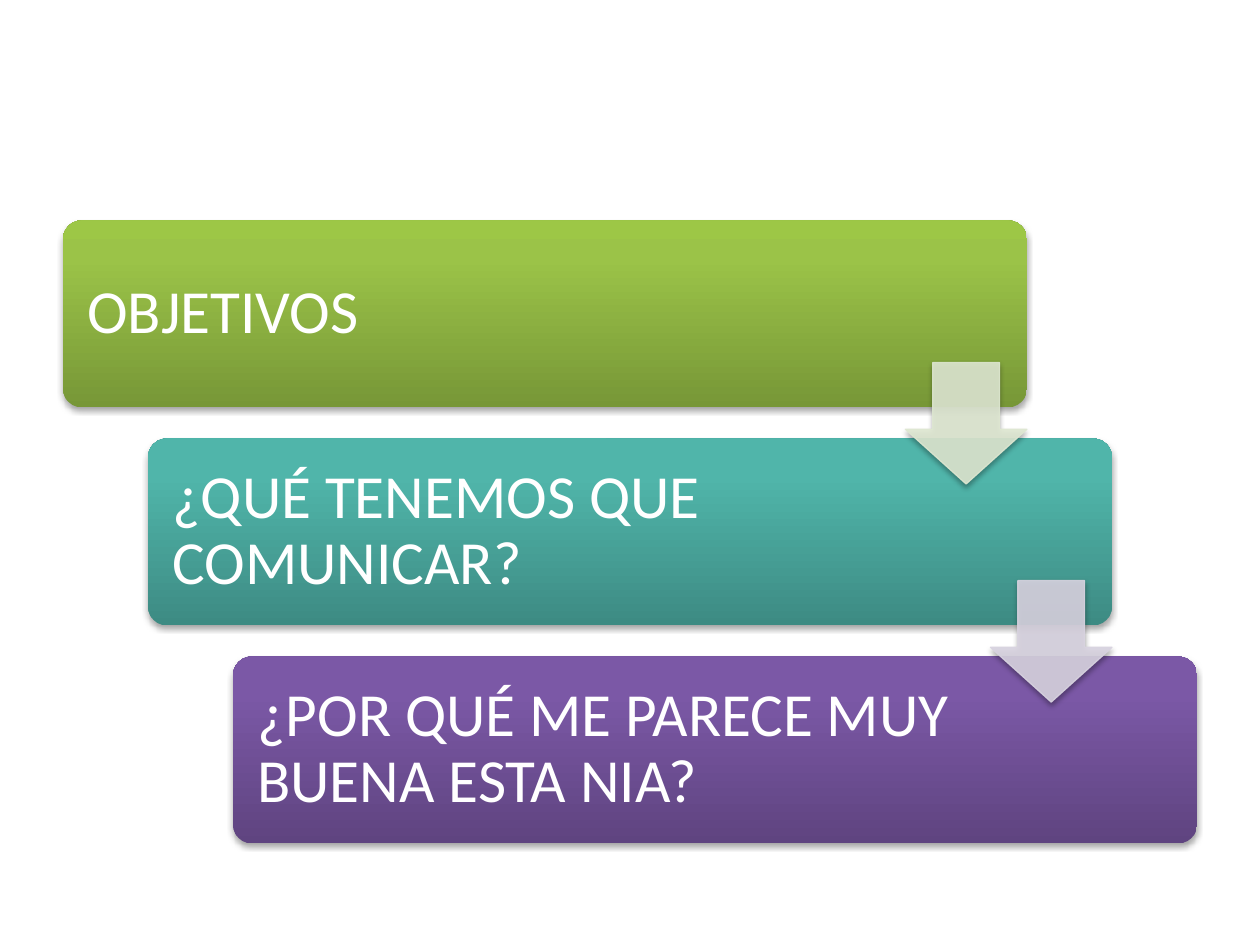
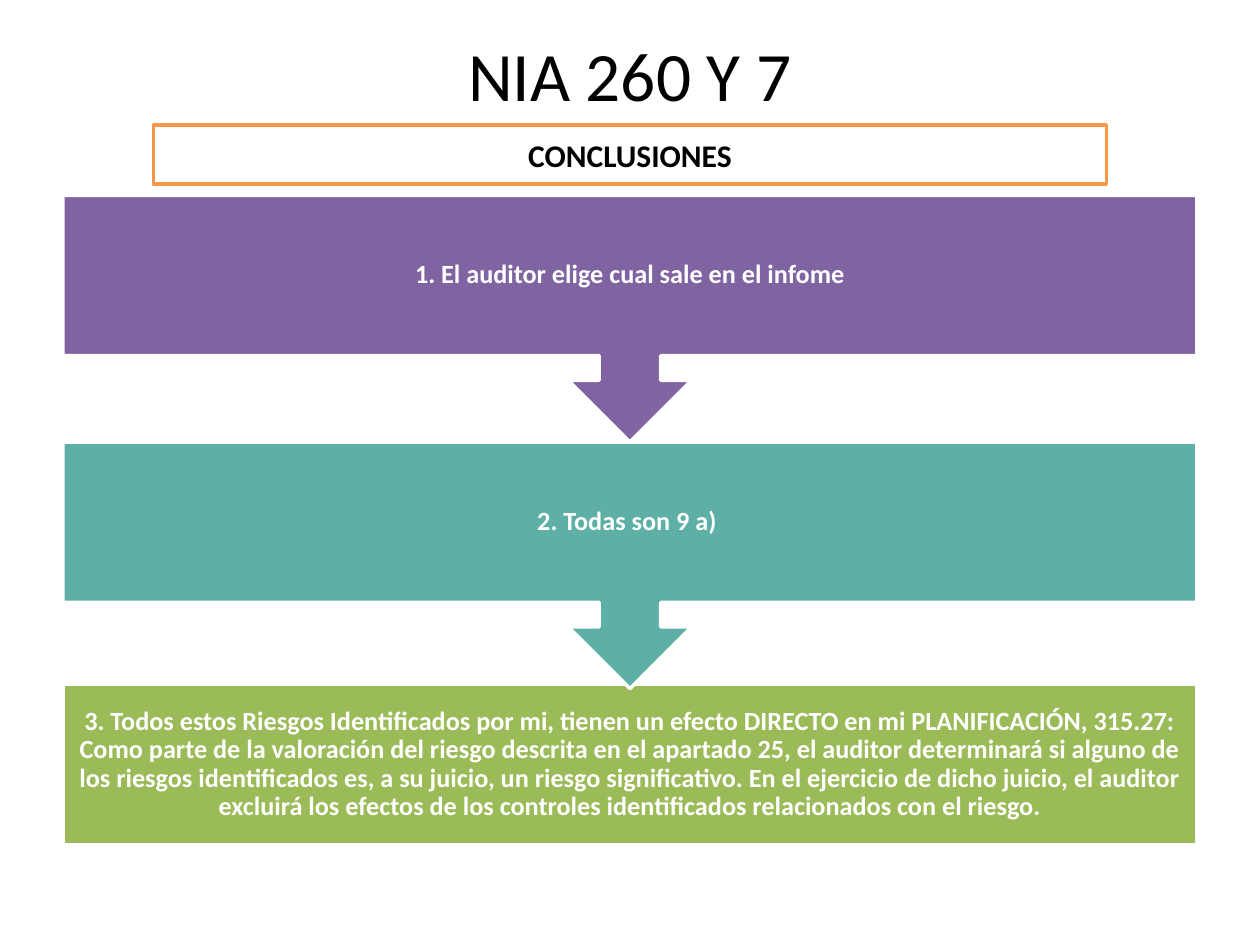
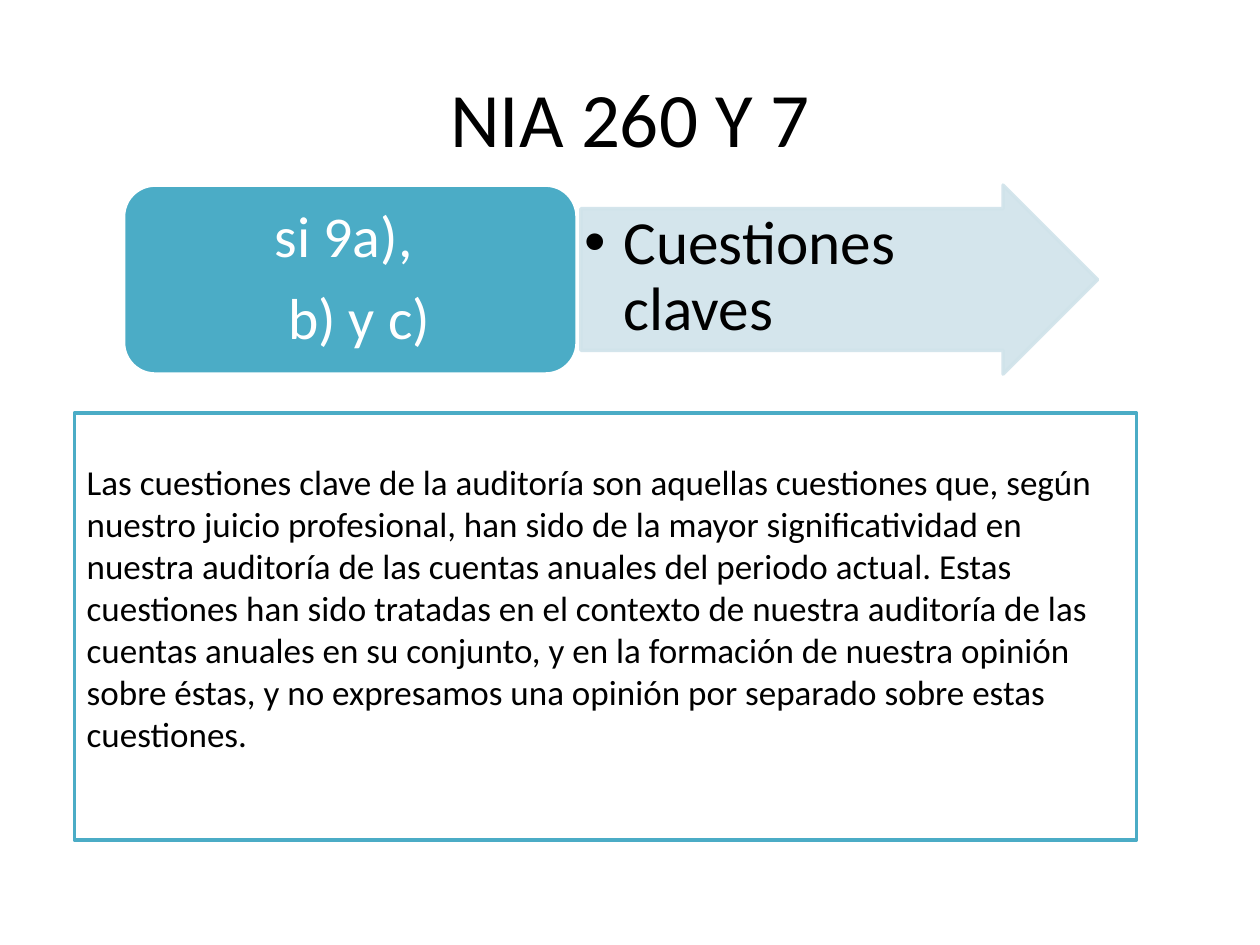
from lxml import etree
from pptx import Presentation
from pptx.dml.color import RGBColor
from pptx.enum.shapes import MSO_SHAPE
from pptx.enum.text import MSO_ANCHOR, MSO_AUTO_SIZE, PP_ALIGN
from pptx.oxml.ns import qn
from pptx.util import Pt

RECT, ROUND = MSO_SHAPE.RECTANGLE, MSO_SHAPE.ROUNDED_RECTANGLE
DOWN, RIGHT = MSO_SHAPE.DOWN_ARROW, MSO_SHAPE.RIGHT_ARROW
CALLOUT = MSO_SHAPE.DOWN_ARROW_CALLOUT
LEFT, CENTER = PP_ALIGN.LEFT, PP_ALIGN.CENTER
TOP, MIDDLE = MSO_ANCHOR.TOP, MSO_ANCHOR.MIDDLE

FONT = "Calibri"
TITLE_ONLY, BLANK = 5, 6
TITLE_BOX = (36, 21.6, 648, 90)
TITLE = "NIA 260 Y 7"
COLORS = {
    "white": "FFFFFF", "black": "000000", "orange": "F79646",
    "purple": "8064A2", "teal": "5EAFA6", "green": "9BBB59",
    "blue": "4BACC6", "pale_blue": "D0E3EA",
    "pale_green": "DEE7D1", "pale_purple": "D8D3E0",
}
# Gradient stops at 0, 80 and 100 percent, from bottom to top
GRADIENTS = {
    "green": ("779737", "9BC348", "9DC746"),
    "teal": ("3D8B83", "50B5AA", "4EB8AC"),
    "purple": ("5F4480", "7B58A6", "7C57A8"),
}


def rgb(name):
    return RGBColor.from_string(COLORS[name])


def add_xml(parent, tag, **attrs):
    return etree.SubElement(parent, qn(tag), {k: str(v) for k, v in attrs.items()})


def set_alpha(fill_parent, percent):
    for clr in fill_parent.iter(qn("a:srgbClr")):
        add_xml(clr, "a:alpha", val=percent * 1000)


def add_shadow(sp):
    shadow = add_xml(sp._element.spPr.find(qn("a:effectLst")), "a:outerShdw",
                     blurRad=Pt(3.1), dist=Pt(1.8), dir=5400000, rotWithShape=0)
    clr = add_xml(shadow, "a:srgbClr", val=COLORS["black"])
    add_xml(clr, "a:alpha", val=35000)


def set_gradient(sp, stops):
    sp.fill.gradient()
    grad = sp._element.spPr.find(qn("a:gradFill"))
    for child in list(grad):
        grad.remove(child)
    gs_list = add_xml(grad, "a:gsLst")
    for pos, color in zip((0, 80, 100), stops):
        add_xml(add_xml(gs_list, "a:gs", pos=pos * 1000), "a:srgbClr", val=color)
    add_xml(grad, "a:lin", ang=16200000, scaled=0)


def add_box(s, kind, box, fill=None, line=None, width=2, adj=(), alpha=None):
    sp = s.shapes.add_shape(kind, *map(Pt, box))
    sp.shadow.inherit = False
    for i, value in enumerate(adj):
        sp.adjustments[i] = value
    if fill:
        sp.fill.solid()
        sp.fill.fore_color.rgb = rgb(fill)
    if line:
        sp.line.color.rgb = rgb(line)
        sp.line.width = Pt(width)
    else:
        sp.line.fill.background()
    if alpha:
        set_alpha(sp._element.spPr, alpha)
    return sp


def write(sp, *texts, size, color="white", bold=False, align=CENTER,
          anchor=MIDDLE, insets=(7.2, 3.6, 7.2, 3.6), spacing=None, after=0):
    tf = sp.text_frame
    tf.word_wrap = True
    tf.auto_size = MSO_AUTO_SIZE.NONE
    tf.vertical_anchor = anchor
    tf.margin_left, tf.margin_top, tf.margin_right, tf.margin_bottom = map(Pt, insets)
    for i, text in enumerate(texts):
        p = tf.add_paragraph() if i else tf.paragraphs[0]
        p.alignment = align
        if spacing:
            p.line_spacing = spacing
        if after:
            p.space_after = Pt(after)
        r = p.add_run()
        r.text = text
        r.font.name, r.font.size, r.font.bold = FONT, Pt(size), bold
        r.font.color.rgb = rgb(color)
    return tf


def add_title(s, size, bottom=3.6):
    title = s.shapes.title
    title.left, title.top, title.width, title.height = map(Pt, TITLE_BOX)
    write(title, TITLE, size=size, color="black", insets=(7.2, 3.6, 7.2, bottom))


def add_staircase(s, box, steps, arrow_colors):
    """Cards stepping down to the right, with an arrow from each to the next."""
    x, y, w, h = box
    card_w, card_h = 0.85 * w, 0.3 * h
    dx, dy = ((w - card_w) / (len(steps) - 1), (h - card_h) / (len(steps) - 1))
    for i, (text, gradient) in enumerate(steps):
        card = add_box(s, ROUND, (x + i * dx, y + i * dy, card_w, card_h), adj=(0.1,))
        set_gradient(card, GRADIENTS[gradient])
        add_shadow(card)
        write(card, text, size=35, align=LEFT, spacing=0.9,
              insets=(10.8, 10.8, 125, 10.8))
    side = 0.65 * card_h
    for i, color in enumerate(arrow_colors):
        arrow = add_box(s, DOWN,
                        (x + i * dx + card_w - side, y + i * dy + 0.76 * card_h, side, side),
                        fill=color, line=color, width=0.75, adj=(0.55, 0.45), alpha=90)
        add_shadow(arrow)


def add_conclusions(s, box, steps):
    """Stacked callouts pointing down to a closing block, drawn from the bottom up."""
    x, y, w, h = box
    pitch, block_h = 0.38 * h, 0.247 * h
    last = len(steps) - 1
    for i, (text, color) in reversed(list(enumerate(steps))):
        if i == last:
            kind, place = RECT, (x, y + h - block_h, w, block_h)
        else:
            kind, place = CALLOUT, (x, y + i * pitch, w, pitch)
        sp = add_box(s, kind, place, fill=color, line="white")
        write(sp, text, size=15, bold=True, spacing=0.9, insets=(8.5,) * 4)


def add_key_matter(s, box, cases, result):
    """Rounded card with the cases, and an arrow holding the result."""
    x, y, w, h = box
    card_w, gap = 259.2, 2.2
    arrow = add_box(s, RIGHT, (x + card_w + gap, y, w - card_w - gap, h),
                    fill="pale_blue", line="pale_blue", adj=(0.75, 0.5), alpha=90)
    tf = write(arrow, result, size=35, color="black", align=LEFT, anchor=TOP,
               spacing=0.9, insets=(1.75,) * 4)
    pPr = tf.paragraphs[0]._p.get_or_add_pPr()
    pPr.set("marL", str(Pt(22.5)))
    pPr.set("indent", str(-Pt(22.5)))
    add_xml(pPr, "a:buFont", typeface="Arial")
    add_xml(pPr, "a:buChar", char="•")

    card = add_box(s, ROUND, (x, y, card_w, h), fill="blue", line="white")
    tf = write(card, *cases, size=33, spacing=0.9, after=11, insets=(10, 5, 10, 5))
    tf.paragraphs[-1]._p.get_or_add_pPr().set("marL", str(Pt(10)))


def staircase_slide(prs):
    s = prs.slides.add_slide(prs.slide_layouts[BLANK])
    add_staircase(s, (36, 126, 648, 356), [
        ("OBJETIVOS", "green"),
        ("¿QUÉ TENEMOS QUE COMUNICAR?", "teal"),
        ("¿POR QUÉ ME PARECE MUY BUENA ESTA NIA?", "purple"),
    ], ("pale_green", "pale_purple"))


def conclusions_slide(prs):
    s = prs.slides.add_slide(prs.slide_layouts[TITLE_ONLY])
    add_title(s, 39.6, bottom=52)
    add_conclusions(s, (36, 111.6, 648, 371), [
        ("1. El auditor elige cual sale en el infome", "purple"),
        ("2. Todas son 9 a) ", "teal"),
        ("3. Todos estos Riesgos Identificados por mi, tienen un efecto DIRECTO en mi "
         "PLANIFICACIÓN, 315.27: Como parte de la valoración del riesgo descrita en el "
         "apartado 25, el auditor determinará si alguno de los riesgos identificados es, "
         "a su juicio, un riesgo significativo. En el ejercicio de dicho juicio, el "
         "auditor excluirá los efectos de los controles identificados relacionados con "
         "el riesgo.", "green"),
    ])
    heading = add_box(s, RECT, (87.8, 71.3, 544.4, 34), fill="white", line="orange")
    write(heading, "CONCLUSIONES", size=18, color="black", bold=True)


def key_matters_slide(prs):
    s = prs.slides.add_slide(prs.slide_layouts[TITLE_ONLY])
    add_title(s, 44)
    add_key_matter(s, (70.6, 105.8, 556.6, 108), ("si 9a), ", "b) y c)"),
                   "Cuestiones claves")
    # Definition below the arrow
    panel = add_box(s, RECT, (42.5, 236, 607, 244), fill="white", line="blue")
    write(panel,
          "Las cuestiones clave de la auditoría son aquellas cuestiones que, según "
          "nuestro juicio profesional, han sido de la mayor significatividad en nuestra "
          "auditoría de las cuentas anuales del periodo actual. Estas cuestiones han "
          "sido tratadas en el contexto de nuestra auditoría de las cuentas anuales en "
          "su conjunto, y en la formación de nuestra opinión sobre éstas, y no "
          "expresamos una opinión por separado sobre estas cuestiones.",
          size=20, color="black", align=LEFT, insets=(7.2, 3.6, 7.2, 25.6))


def main():
    prs = Presentation()
    prs.slide_width, prs.slide_height = Pt(720), Pt(540)
    staircase_slide(prs)
    conclusions_slide(prs)
    key_matters_slide(prs)
    prs.save("out.pptx")


if __name__ == "__main__":
    main()
